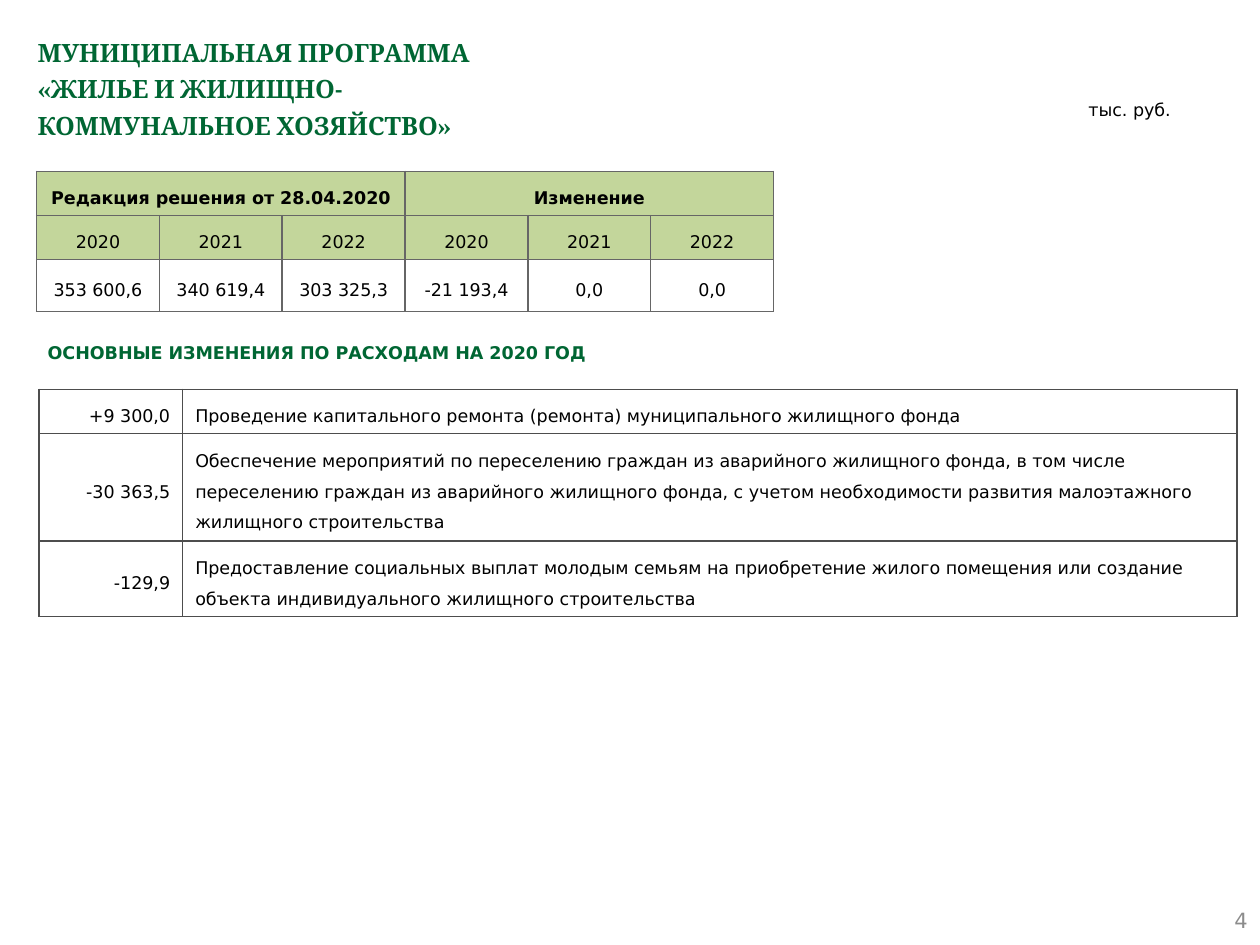
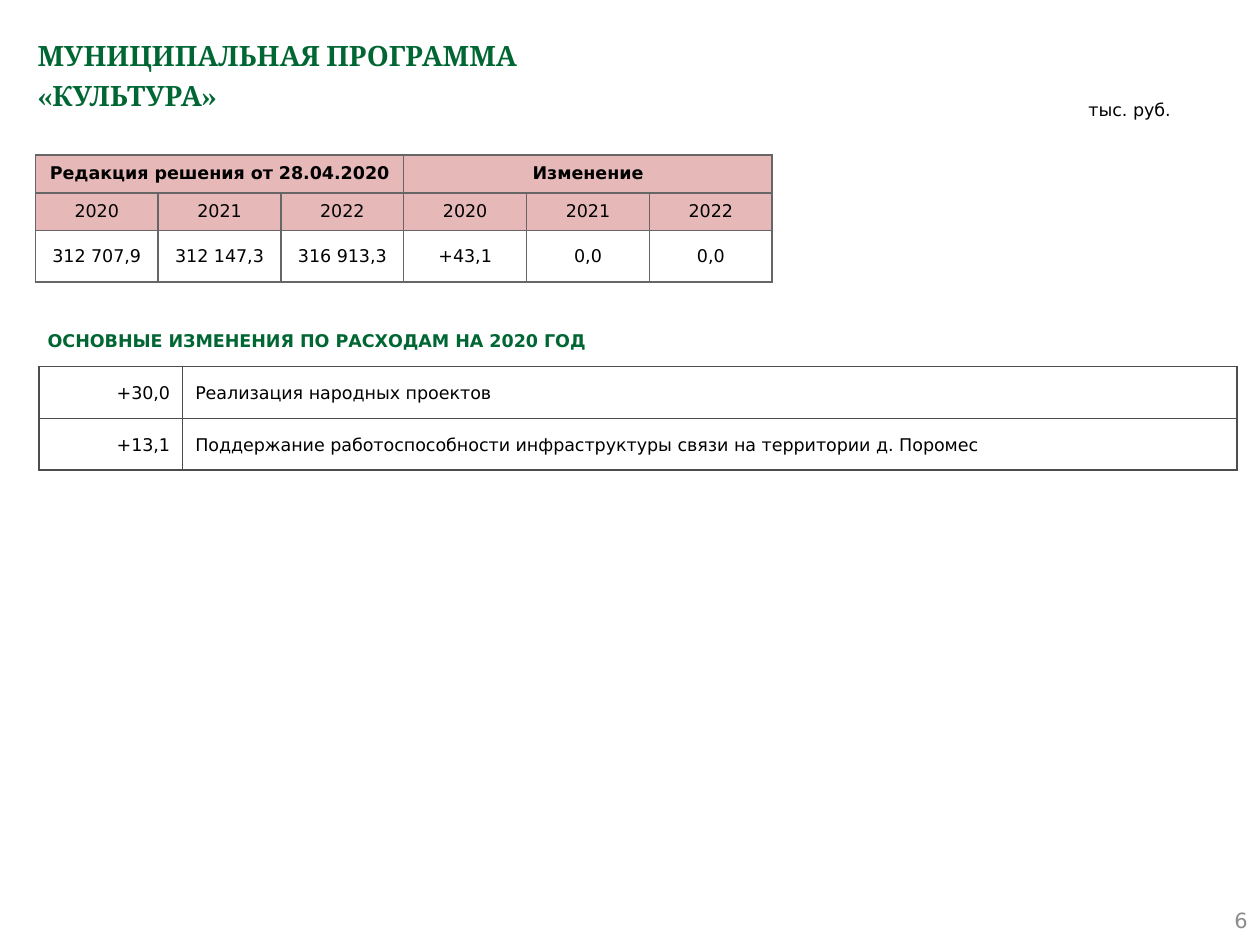
from copy import deepcopy

from lxml import etree
from pptx import Presentation
from pptx.dml.color import RGBColor
from pptx.enum.shapes import MSO_SHAPE
from pptx.enum.text import MSO_ANCHOR, PP_ALIGN
from pptx.oxml.ns import qn
from pptx.util import Inches, Pt

LEFT, CENTER, RIGHT = PP_ALIGN.LEFT, PP_ALIGN.CENTER, PP_ALIGN.RIGHT
TOP, MIDDLE = MSO_ANCHOR.TOP, MSO_ANCHOR.MIDDLE
PLATE = MSO_SHAPE.PENTAGON

GREEN = RGBColor(0x00, 0x66, 0x33)
BLACK = RGBColor(0x00, 0x00, 0x00)
PALE = RGBColor(0x8C, 0x8C, 0x8C)
DARK = RGBColor(0x4D, 0x4D, 0x4D)
GRAY = RGBColor(0x66, 0x66, 0x66)
LIME = RGBColor(0xC3, 0xD6, 0x9B)
PINK = RGBColor(0xE6, 0xB9, 0xB8)

SERIF, SANS = "Cambria", "DejaVu Sans"
BODY = {"name": SANS, "size": Pt(10), "bold": False}
BOLD = {**BODY, "bold": True}
PAGE = {**BODY, "size": Pt(12)}
TIGHT = dict.fromkeys(
    ("margin_left", "margin_right", "margin_top", "margin_bottom"), Inches(0.05))

HEADS = ("Редакция решения от 28.04.2020", "Изменение")
YEARS = ("2020", "2021", "2022")


def apply(item, values):
    for name, value in values.items():
        setattr(item, name, value)


class Deck:
    def __init__(self):
        self.file = Presentation()
        apply(self.file, {"slide_width": Inches(10), "slide_height": Inches(7.5)})
        self.slide = None

    def start(self):
        self.slide = self.file.slides.add_slide(self.file.slide_layouts[6])

    def put(self, frame, text, font, color=BLACK, align=LEFT, space=None):
        line = frame.paragraphs[0]
        line.text = text
        apply(line, {"alignment": align, "line_spacing": space})
        for run in line.runs:
            apply(run.font, font)
            run.font.color.rgb = color
        for gap in line._p.findall(qn("a:br")):
            gap.append(deepcopy(line.runs[0]._r.rPr))

    def text(self, box, text, font, color=BLACK, align=LEFT, space=None, anchor=TOP):
        frame = self.slide.shapes.add_textbox(*map(Inches, box)).text_frame
        apply(frame, {"word_wrap": True, "vertical_anchor": anchor})
        self.put(frame, text, font, color, align, space)

    def title(self, text, size):
        font = {"name": SERIF, "size": Pt(size), "bold": True}
        self.text((0.2, 0.2, 9.61, 0.79), text, font, GREEN, space=1.2)

    def band(self, top, width):
        box = map(Inches, (0.28, top, width, 0.43))
        shape = self.slide.shapes.add_shape(PLATE, *box)
        shape.adjustments[0] = 0
        shape.shadow.inherit = False
        shape.fill.background()
        shape.line.fill.background()
        shape.text_frame.vertical_anchor = MIDDLE
        self.put(shape.text_frame, "ОСНОВНЫЕ ИЗМЕНЕНИЯ ПО РАСХОДАМ НА 2020 ГОД",
                 BOLD, GREEN)

    def edge(self, cell, color):
        props = cell._tc.get_or_add_tcPr()
        for side in ("lnL", "lnR", "lnT", "lnB"):
            line = etree.SubElement(props, qn(f"a:{side}"), w=str(Pt(1)))
            fill = etree.SubElement(line, qn("a:solidFill"))
            etree.SubElement(fill, qn("a:srgbClr"), val=str(color))

    def grid(self, left, top, cols, rows, color):
        size = map(Inches, (left, top, sum(cols), sum(rows)))
        table = self.slide.shapes.add_table(len(rows), len(cols), *size).table
        apply(table, {"first_row": False, "horz_banding": False})
        for col, width in zip(table.columns, cols):
            col.width = Inches(width)
        for row, height in zip(table.rows, rows):
            row.height = Inches(height)
        for cell in table.iter_cells():
            self.edge(cell, color)
            cell.fill.background()
            cell.vertical_anchor = MIDDLE
        return table

    def totals(self, left, top, values, tint, space):
        table = self.grid(left, top, [5.85 / 6] * 6, (0.3, 0.3, 0.41), GRAY)
        for cell in table.iter_cells():
            apply(cell, TIGHT)
        for index, head in enumerate(HEADS):
            cell = table.cell(0, index * 3)
            cell.merge(table.cell(0, index * 3 + 2))
            self.put(cell.text_frame, head, BOLD, align=CENTER, space=space)
        for row, texts in enumerate((YEARS * 2, values), 1):
            for col, text in enumerate(texts):
                self.put(table.cell(row, col).text_frame, text, BODY,
                         align=CENTER, space=space)
        for row in range(2):
            for col in range(6):
                fill = table.cell(row, col).fill
                fill.solid()
                fill.fore_color.rgb = tint

    def items(self, top, rows, items, space):
        table = self.grid(0.31, top, (1.14, 8.37), rows, DARK)
        for row, texts in enumerate(items):
            for col, align in enumerate((RIGHT, LEFT)):
                self.put(table.cell(row, col).text_frame, texts[col], BODY,
                         align=align, space=space)

    def frame(self, title, size, page):
        self.start()
        self.title(title, size)
        self.text((7.67, 7.1, 2.33, 0.4), page, PAGE, PALE, RIGHT, anchor=MIDDLE)
        self.text((8.54, 0.7, 1.01, 0.3), "тыс. руб.", BODY, space=1.2)


def main():
    deck = Deck()

    deck.frame("МУНИЦИПАЛЬНАЯ ПРОГРАММА\v«ЖИЛЬЕ И ЖИЛИЩНО-\vКОММУНАЛЬНОЕ ХОЗЯЙСТВО»",
               14.4, "4")
    deck.band(2.58, 5.32)
    deck.items(3.09, (0.3, 0.29, 0.27), (
        ("+9 300,0",
         "Проведение капитального ремонта (ремонта) муниципального жилищного фонда"),
        ("-30 363,5",
         "Обеспечение мероприятий по переселению граждан из аварийного жилищного "
         "фонда, в том числе переселению граждан из аварийного жилищного фонда, "
         "с учетом необходимости развития малоэтажного жилищного строительства"),
        ("-129,9",
         "Предоставление социальных выплат молодым семьям на приобретение жилого "
         "помещения или создание объекта индивидуального жилищного строительства"),
    ), 1.5)
    deck.totals(0.29, 1.36, ("353 600,6", "340 619,4", "303 325,3",
                             "-21 193,4", "0,0", "0,0"), LIME, 1.5)

    deck.frame("МУНИЦИПАЛЬНАЯ ПРОГРАММА\v«КУЛЬТУРА»", 16, "6")
    deck.band(2.49, 4.92)
    deck.items(2.91, (0.41, 0.41), (
        ("+30,0", "Реализация народных проектов"),
        ("+13,1", "Поддержание работоспособности инфраструктуры связи "
                  "на территории д. Поромес"),
    ), 1.15)
    deck.totals(0.28, 1.23, ("312 707,9", "312 147,3", "316 913,3",
                             "+43,1", "0,0", "0,0"), PINK, None)

    deck.file.save("out.pptx")


if __name__ == "__main__":
    main()
